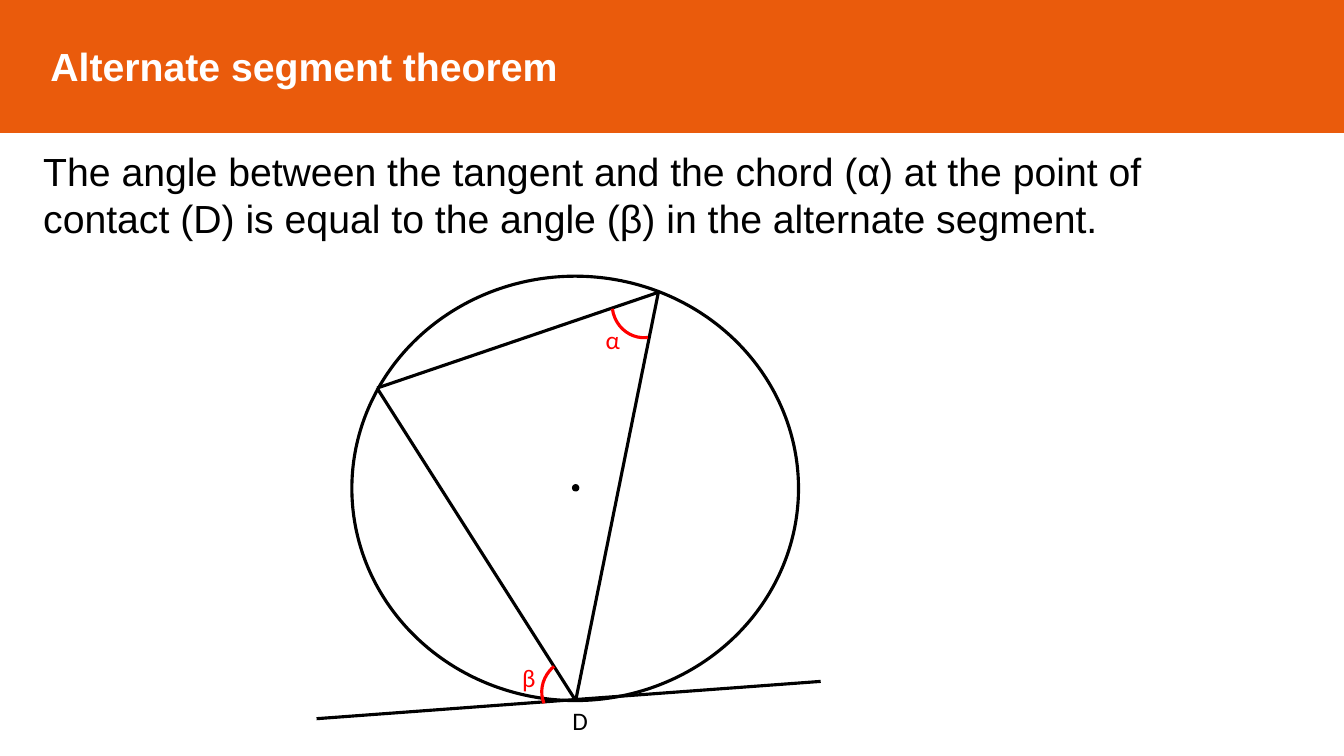
import pptx
import pptx.util
import pptx.dml.color
import pptx.enum.shapes
import pptx.enum.text
import lxml.etree
from pptx.util import Inches

ORANGE = pptx.dml.color.RGBColor(0xEA, 0x5B, 0x0C)
BLACK = pptx.dml.color.RGBColor(0, 0, 0)
WHITE = pptx.dml.color.RGBColor(0xFF, 0xFF, 0xFF)
RED = pptx.dml.color.RGBColor(0xFF, 0, 0)
SHAPES = pptx.enum.shapes.MSO_SHAPE

deck = pptx.Presentation()
deck.slide_width, deck.slide_height = Inches(13.33), Inches(7.5)
slide = deck.slides.add_slide(deck.slide_layouts[5])


def add_figure(kind, box, fill, line, weight):
    figure = slide.shapes.add_shape(kind, *map(Inches, box))
    figure.shadow.inherit = False
    if fill is None:
        figure.fill.background()
    else:
        figure.fill.solid()
        figure.fill.fore_color.rgb = fill
    figure.line.color.rgb = line
    figure.line.width = pptx.util.Pt(weight)
    return figure


def add_text(text, box, font_name, size, color, wrap):
    label = slide.shapes.add_textbox(*map(Inches, box))
    label.text_frame.word_wrap = wrap
    label.text_frame.text = text
    font = label.text_frame.paragraphs[0].runs[0].font
    font.name, font.size, font.color.rgb = font_name, pptx.util.Pt(size), color


# Title banner
title = slide.shapes.title
title.left, title.top = Inches(0), Inches(-0.01)
title.width, title.height = Inches(13.33), Inches(1.32)
title.fill.solid()
title.fill.fore_color.rgb = ORANGE
title.line.color.rgb = ORANGE
title.line.width = pptx.util.Pt(1)
title.text_frame.text = "Alternate segment theorem"
title.text_frame.auto_size = pptx.enum.text.MSO_AUTO_SIZE.NONE
title.text_frame.vertical_anchor = pptx.enum.text.MSO_ANCHOR.MIDDLE
title.text_frame.margin_left = Inches(0.5)
heading = title.text_frame.paragraphs[0]
heading.alignment = pptx.enum.text.PP_ALIGN.LEFT
heading_font = heading.runs[0].font
heading_font.name, heading_font.size = "Arial", pptx.util.Pt(28)
heading_font.bold, heading_font.color.rgb = True, WHITE

# Circle and its centre
add_figure(SHAPES.OVAL, (3.49, 2.74, 4.43, 4.21), WHITE, BLACK, 2.25)
add_figure(SHAPES.OVAL, (5.68, 4.81, 0.06, 0.06), BLACK, BLACK, 1)

# Inscribed triangle and the tangent at D
left_corner, top_corner, contact = (3.74, 3.85), (6.53, 2.9), (5.71, 6.95)
tangent = ((3.14, 7.13), (8.14, 6.76))
for start, end in (
    (left_corner, contact),
    (left_corner, top_corner),
    (top_corner, contact),
    tangent,
):
    segment = slide.shapes.add_connector(
        pptx.enum.shapes.MSO_CONNECTOR.STRAIGHT, *map(Inches, start + end)
    )
    segment.line.color.rgb = BLACK
    segment.line.width = pptx.util.Pt(2.25)
    lxml.etree.SubElement(
        segment._element.spPr, pptx.oxml.ns.qn("a:effectLst")
    )

# Angle arcs
for left, top, rotation, arc_start, arc_end in (
    (5.39, 6.51, 248.3, 161.8, 203.89),
    (6.07, 2.67, 184.3, 155.71, 207.7),
):
    arc = add_figure(SHAPES.ARC, (left, top, 0.64, 0.68), None, RED, 2.25)
    arc.rotation = rotation
    arc.adjustments[0], arc.adjustments[1] = arc_start, arc_end

for name, left, top, color in (
    ("D", 5.58, 6.95, BLACK),
    ("α", 5.91, 3.17, RED),
    ("β", 5.08, 6.52, RED),
):
    add_text(name, (left, top, 0.26, 0.4), "Calibri", 18, color, False)

add_text(
    "The angle between the tangent and the chord (α) at the point of contact (D) "
    "is equal to the angle (β) in the alternate segment.",
    (0.33, 1.41, 11.71, 1.04), "Arial", 28, BLACK, True,
)

deck.save("out.pptx")
